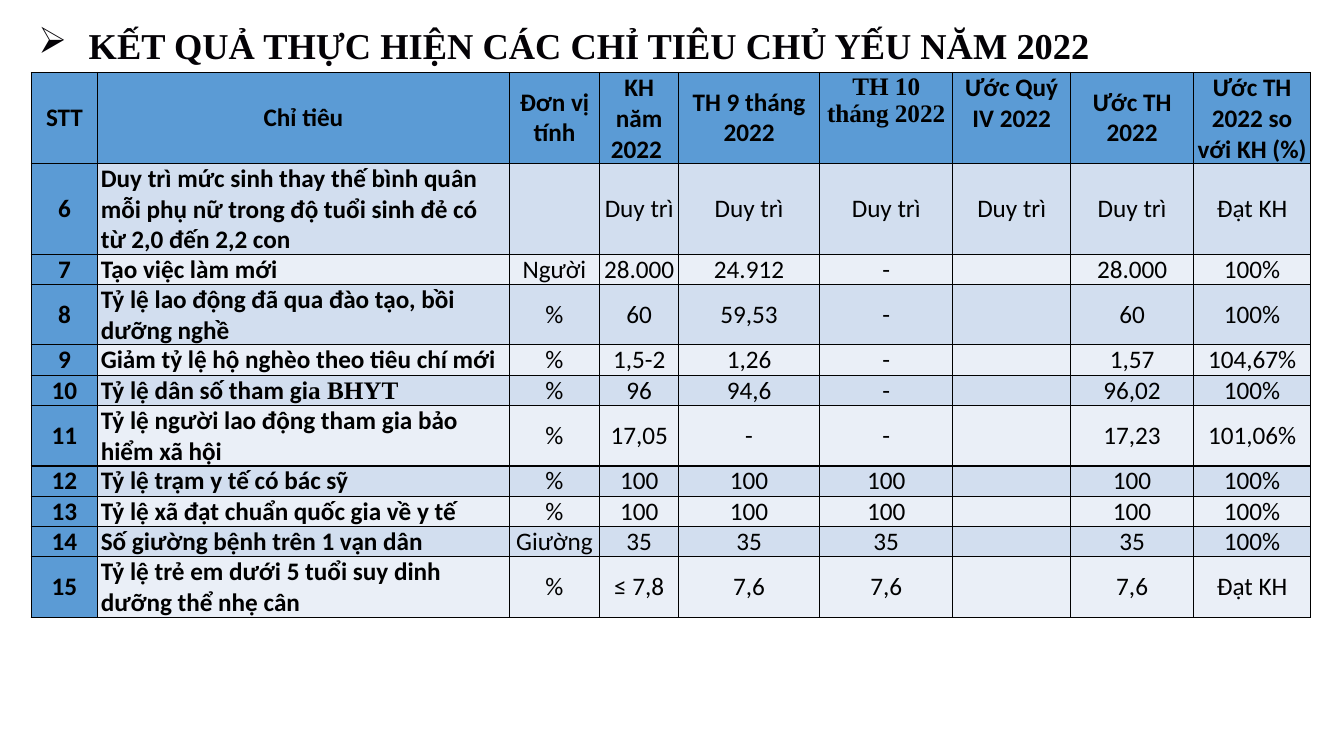
import lxml.etree
import pptx
import pptx.dml.color
import pptx.enum.text
import pptx.oxml.ns
import pptx.util

TITLE = "KẾT QUẢ THỰC HIỆN CÁC CHỈ TIÊU CHỦ YẾU NĂM 2022"
HEAD = ["STT", "Chỉ tiêu", "Đơn vị tính", "KH năm 2022 ", "TH 9 tháng 2022",
        "TH 10 tháng 2022", "Ước Quý IV 2022", "Ước TH 2022", "Ước TH 2022 so với KH (%)"]
KEEP = "Duy trì"
ROWS = [
    ["6", "Duy trì mức sinh thay thế bình quân mỗi phụ nữ trong độ tuổi sinh đẻ có từ 2,0 đến 2,2 con",
     "", KEEP, KEEP, KEEP, KEEP, KEEP, "Đạt KH"],
    ["7", "Tạo việc làm mới", "Người", "28.000", "24.912", "-", "", "28.000", "100%"],
    ["8", "Tỷ lệ lao động đã qua đào tạo, bồi dưỡng nghề", "%", "60", "59,53", "-", "", "60", "100%"],
    ["9", "Giảm tỷ lệ hộ nghèo theo tiêu chí mới", "%", "1,5-2", "1,26", "-", "", "1,57", "104,67%"],
    ["10", "Tỷ lệ dân số tham gi|a BHYT", "%", "96", "94,6", "-", "", "96,02", "100%"],
    ["11", "Tỷ lệ người lao động tham gia bảo hiểm xã hội", "%", "17,05", "-", "-", "", "17,23", "101,06%"],
    ["12", "Tỷ lệ trạm y tế có bác sỹ", "%", "100", "100", "100", "", "100", "100%"],
    ["13", "Tỷ lệ xã đạt chuẩn quốc gia về y tế", "%", "100", "100", "100", "", "100", "100%"],
    ["14", "Số giường bệnh trên 1 vạn dân", "Giường", "35", "35", "35", "", "35", "100%"],
    ["15", "Tỷ lệ trẻ em dưới 5 tuổi suy dinh dưỡng thể nhẹ cân", "%", "≤ 7,8", "7,6", "7,6", "", "7,6", "Đạt KH"],
]
WIDTHS = [0.66, 4.08, 0.9, 0.78, 1.4, 1.32, 1.17, 1.22, 1.16]
LINES = [3, 3, 1, 2, 1, 1, 2, 1, 1, 1, 2]
LINE = 0.3
COLORS = {"title": "040206", "text": "000000", "head": "5B9BD5", "odd": "D2DEEF", "even": "EAEFF7"}
SANS, SERIF = "Calibri", "Times New Roman"
SPACE = {5: 24, 6: 12}

Inches = pptx.util.Inches
Pt = pptx.util.Pt
ALIGN = pptx.enum.text.PP_ALIGN
ANCHOR = pptx.enum.text.MSO_ANCHOR
qn = pptx.oxml.ns.qn


def rgb(name):
    return pptx.dml.color.RGBColor.from_string(COLORS[name])


def write(frame, text, fonts=(SANS, SERIF), size=18, color="text", bold=False,
          align=ALIGN.CENTER, before=0):
    para = frame.paragraphs[0]
    para.alignment = align
    para.space_before = Pt(before)
    for part, font in zip(text.split("|"), fonts):
        run = para.add_run()
        run.text = part
        run.font.name = font
        run.font.size = Pt(size)
        run.font.bold = bold
        run.font.color.rgb = rgb(color)
    return para


def border(cell):
    props = cell._tc.get_or_add_tcPr()
    for spot, side in enumerate(("lnL", "lnR", "lnT", "lnB")):
        line = lxml.etree.Element(qn("a:" + side), w=str(Pt(1)))
        fill = lxml.etree.SubElement(line, qn("a:solidFill"))
        lxml.etree.SubElement(fill, qn("a:srgbClr"), val=COLORS["text"])
        props.insert(spot, line)


def add_title(slide):
    title = slide.shapes.title
    title.left, title.top = Inches(0.28), Inches(0.18)
    title.width, title.height = Inches(12.78), Inches(0.54)
    frame = title.text_frame
    frame.word_wrap = True
    frame.auto_size = pptx.enum.text.MSO_AUTO_SIZE.SHAPE_TO_FIT_TEXT
    frame.vertical_anchor = ANCHOR.TOP
    para = write(frame, TITLE, fonts=(SERIF,), size=26, color="title", bold=True, align=ALIGN.LEFT)
    props = para._p.get_or_add_pPr()
    props.set("marL", str(Inches(0.5)))
    props.set("indent", str(Inches(-0.5)))
    lxml.etree.SubElement(props, qn("a:buChar"), char="➢")


def add_grid(slide):
    data = [HEAD] + ROWS
    table = slide.shapes.add_table(len(data), len(HEAD), Inches(0.31), Inches(0.72),
                                   Inches(sum(WIDTHS)), Inches(LINE * sum(LINES))).table
    table.first_row = table.horz_banding = False
    for col, width in zip(table.columns, WIDTHS):
        col.width = Inches(width)
    for r, (row, lines) in enumerate(zip(data, LINES)):
        table.rows[r].height = Inches(LINE * lines)
        for c, text in enumerate(row):
            cell = table.cell(r, c)
            head = r == 0
            cell.margin_left = cell.margin_right = Inches(0.03)
            cell.margin_top = cell.margin_bottom = 0
            high = head and c in SPACE
            cell.vertical_anchor = ANCHOR.TOP if high else ANCHOR.MIDDLE
            cell.fill.solid()
            cell.fill.fore_color.rgb = rgb("head" if head or c == 0 else "odd" if r % 2 else "even")
            border(cell)
            if text:
                write(cell.text_frame, text,
                      fonts=(SERIF,) if head and c == 5 else (SANS, SERIF),
                      bold=head or c < 2,
                      align=ALIGN.LEFT if c == 1 and not head else ALIGN.CENTER,
                      before=SPACE[c] if high else 0)


def main():
    deck = pptx.Presentation()
    deck.slide_width, deck.slide_height = Inches(13.33), Inches(7.5)
    slide = deck.slides.add_slide(deck.slide_layouts[5])
    add_title(slide)
    add_grid(slide)
    deck.save("out.pptx")


if __name__ == "__main__":
    main()
